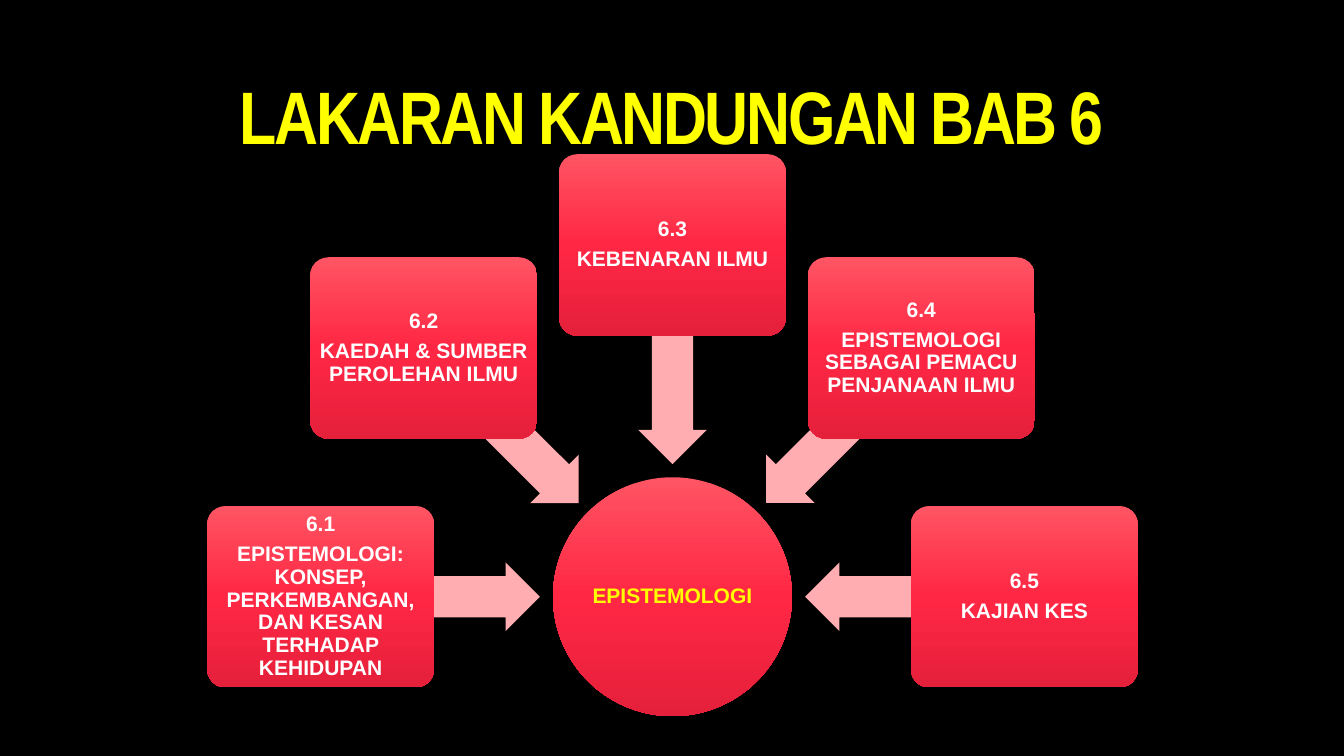
from copy import deepcopy
from dataclasses import dataclass
from math import cos, radians, sin

from pptx import Presentation
from pptx import util as u
from pptx.dml.color import RGBColor as Rgb
from pptx.enum import shapes, text
from pptx.oxml.ns import qn


@dataclass(frozen=True)
class Theme:
    back: str = "000000"
    head: str = "FFFF00"
    body: str = "FFFFFF"
    arrow: str = "FFADB0"
    reds: tuple = ("FF5463", "FF2744", "E5203B")
    big: float = 53.1
    small: float = 15
    wide: str = "Arial"
    slim: str = "Arial Narrow"


THEME = Theme()
HUB = (6.67, 5.92)
CARDS = [
    ("6.1", "EPISTEMOLOGI: KONSEP, PERKEMBANGAN, DAN KESAN TERHADAP KEHIDUPAN"),
    ("6.2", "KAEDAH & SUMBER PEROLEHAN ILMU"),
    ("6.3", "KEBENARAN ILMU"),
    ("6.4", "EPISTEMOLOGI SEBAGAI PEMACU PENJANAAN ILMU"),
    ("6.5", "KAJIAN KES"),
]


def write(shape, lines, size, font, color, inset):
    frame = shape.text_frame
    frame.text = "\n".join(lines)
    frame.word_wrap = True
    frame.vertical_anchor = text.MSO_ANCHOR.MIDDLE
    frame.margin_left = frame.margin_right = u.Inches(inset)
    frame.margin_top = frame.margin_bottom = u.Inches(0.03)
    for para in frame.paragraphs:
        para.alignment = text.PP_ALIGN.CENTER
        para.line_spacing = 0.9
        para.space_after = u.Pt(0.35 * size)
        for run in para.runs:
            run.font.size = u.Pt(size)
            run.font.name = font
            run.font.bold = True
            run.font.color.rgb = Rgb.from_string(color)


def add_title(slide, words):
    box = slide.shapes.add_textbox(
        u.Inches(0.75), u.Inches(0.84), u.Inches(11.83), u.Inches(0.7))
    write(box, [words], THEME.big, THEME.slim, THEME.head, 0.07)
    para = box.text_frame.paragraphs[0]
    para.space_after = u.Pt(0)
    para.runs[0].font.element.set("spc", "-170") if hasattr(
        para.runs[0].font, "element") else para.runs[0].font
    for props in box.element.iter(qn("a:rPr")):
        props.set("spc", "-170")


def add_form(slide, kind, mid, wide, high):
    shape = slide.shapes.add_shape(
        kind, u.Inches(mid[0] - wide / 2), u.Inches(mid[1] - high / 2),
        u.Inches(wide), u.Inches(high))
    shape.shadow.inherit = False
    shape.line.fill.background()
    return shape


def shade(shape):
    fill = shape.fill
    fill.gradient()
    fill.gradient_angle = 270
    stops = shape.element.spPr.find(".//" + qn("a:gsLst"))
    stops.insert(1, deepcopy(stops[0]))
    for stop, place, color in zip(fill.gradient_stops, (0, 0.5, 1), THEME.reds):
        stop.position = place
        stop.color.rgb = Rgb.from_string(color)


def add_hub(slide, words):
    hub = add_form(slide, shapes.MSO_SHAPE.OVAL, HUB, 2.37, 2.37)
    shade(hub)
    write(hub, [words], THEME.small, THEME.wide, THEME.head, 0.01)


def orbit(reach, angle):
    turn = radians(angle)
    return HUB[0] + reach * cos(turn), HUB[1] + reach * sin(turn)


def add_arrow(slide, angle):
    arrow = add_form(
        slide, shapes.MSO_SHAPE.LEFT_ARROW, orbit(2.4, angle), 2.17, 0.68)
    arrow.adjustments[0] = 0.6
    arrow.adjustments[1] = 0.5
    arrow.rotation = angle % 360
    arrow.fill.solid()
    arrow.fill.fore_color.rgb = Rgb.from_string(THEME.arrow)


def add_card(slide, angle, lines):
    card = add_form(
        slide, shapes.MSO_SHAPE.ROUNDED_RECTANGLE, orbit(3.49, angle), 2.25, 1.8)
    card.adjustments[0] = 0.1
    shade(card)
    write(card, lines, THEME.small, THEME.wide, THEME.body, 0.03)


def main():
    deck = Presentation()
    deck.slide_width = u.Inches(13.33)
    deck.slide_height = u.Inches(7.5)
    slide = deck.slides.add_slide(deck.slide_layouts[6])
    slide.background.fill.solid()
    slide.background.fill.fore_color.rgb = Rgb.from_string(THEME.back)
    add_title(slide, "LAKARAN KANDUNGAN BAB 6")
    add_hub(slide, "EPISTEMOLOGI")
    for step, lines in enumerate(CARDS):
        angle = 180 + 45 * step
        add_arrow(slide, angle)
        add_card(slide, angle, lines)
    deck.save("out.pptx")


if __name__ == "__main__":
    main()
